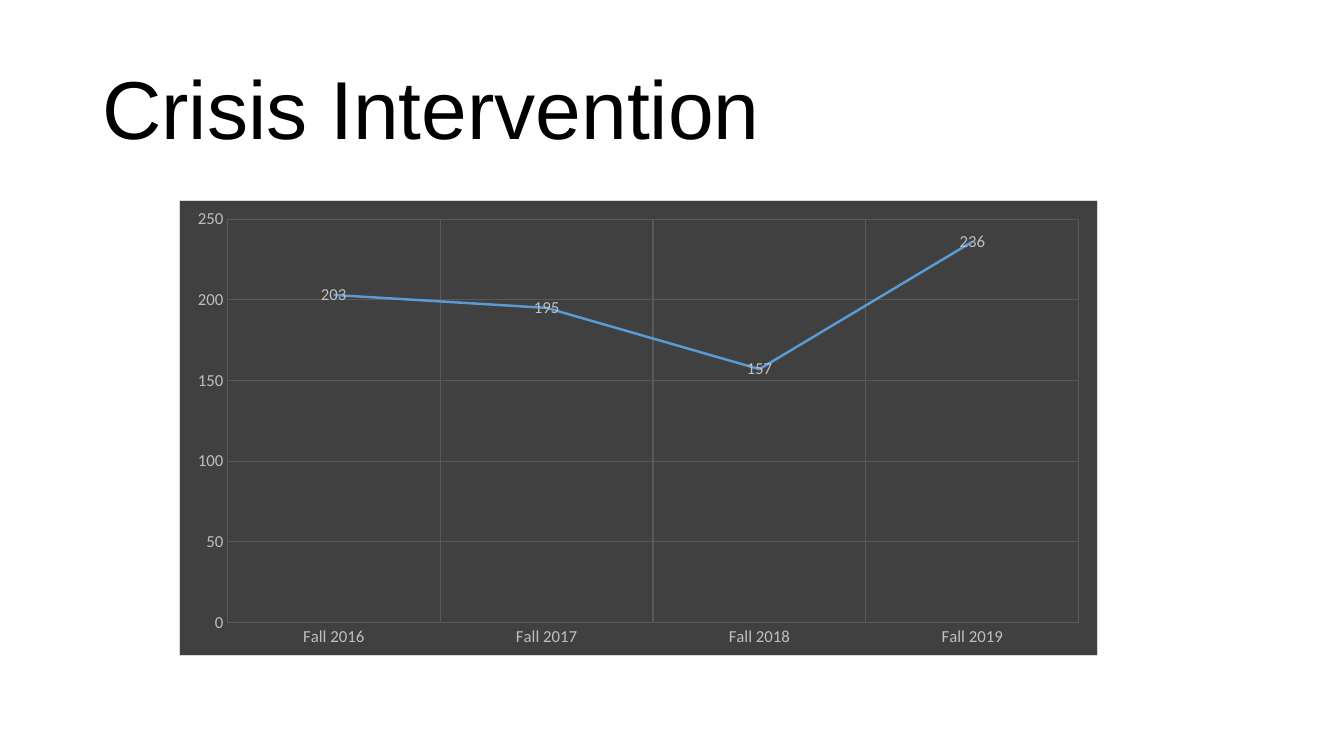
from dataclasses import dataclass

from lxml import etree
from pptx import Presentation
from pptx.chart.data import CategoryChartData
from pptx.dml.color import RGBColor as RGB
from pptx.enum.chart import XL_CHART_TYPE as CT
from pptx.enum.chart import XL_LABEL_POSITION as LabelPos
from pptx.enum.chart import XL_MARKER_STYLE as Marker
from pptx.enum.chart import XL_TICK_MARK as Tick
from pptx.enum.text import MSO_ANCHOR as Anchor
from pptx.oxml import parse_xml
from pptx.oxml.ns import nsdecls
from pptx.util import Cm, Pt


@dataclass(frozen=True)
class Theme:
    title_font: str = "Arial"
    chart_font: str = "Calibri"
    title_size: float = 58.7
    label_size: float = 12
    title: str = "000000"
    panel: str = "404040"
    border: str = "D9D9D9"
    grid: str = "595959"
    label: str = "BFBFBF"
    series: str = "5B9BD5"
    hairline: float = 0.75
    series_width: float = 1.75


THEME = Theme()
CASES = {"Fall 2016": 203, "Fall 2017": 195, "Fall 2018": 157, "Fall 2019": 236}


def style_font(font, name, size, color):
    font.name = name
    font.size = Pt(size)
    font.color.rgb = RGB.from_string(color)


def style_line(line, color, width):
    line.color.rgb = RGB.from_string(color)
    line.width = Pt(width)


def add_title(slide, box, text):
    tf = slide.shapes.add_textbox(*box).text_frame
    tf.word_wrap = True
    tf.vertical_anchor = Anchor.MIDDLE
    tf.text = text
    p = tf.paragraphs[0]
    p.line_spacing = 0.9
    style_font(p.runs[0].font, THEME.title_font, THEME.title_size, THEME.title)


def fill_panel(chart):
    """Dark chart background with a thin light border."""
    panel = parse_xml(
        f'<c:spPr {nsdecls("c", "a")}>'
        f'<a:solidFill><a:srgbClr val="{THEME.panel}"/></a:solidFill>'
        f'<a:ln w="{Pt(THEME.hairline)}"><a:solidFill>'
        f'<a:srgbClr val="{THEME.border}"/></a:solidFill></a:ln></c:spPr>')
    chart.element.chart.addnext(panel)


def add_case_chart(slide, box, cases):
    data = CategoryChartData()
    data.categories = list(cases)
    data.add_series("Series 1", list(cases.values()))
    chart = slide.shapes.add_chart(CT.LINE, *box, data).chart
    chart.has_title = False
    chart.has_legend = False
    label_style = (THEME.chart_font, THEME.label_size, THEME.label)
    style_font(chart.font, *label_style)
    fill_panel(chart)

    # Axes: gridlines only, no axis lines or ticks
    for axis in (chart.category_axis, chart.value_axis):
        axis.has_major_gridlines = True
        style_line(axis.major_gridlines.format.line, THEME.grid, THEME.hairline)
        axis.format.line.fill.background()
        axis.major_tick_mark = axis.minor_tick_mark = Tick.NONE
        style_font(axis.tick_labels.font, *label_style)
    chart.value_axis.minimum_scale = 0
    chart.value_axis.maximum_scale = 250
    chart.value_axis.major_unit = 50

    # Series and its values
    plot = chart.plots[0]
    plot.vary_by_categories = False
    series = plot.series[0]
    series.smooth = False
    series.marker.style = Marker.NONE
    style_line(series.format.line, THEME.series, THEME.series_width)
    labels = series.data_labels
    labels.show_value = True
    labels.position = LabelPos.CENTER
    style_font(labels.font, *label_style)


def main():
    prs = Presentation()
    prs.slide_width, prs.slide_height = Cm(33.87), Cm(19.05)
    slide = prs.slides.add_slide(prs.slide_layouts[6])
    add_title(slide, (Cm(2.33), Cm(1.01), Cm(29.21), Cm(3.68)),
              "Crisis Intervention")
    add_case_chart(slide, (Cm(4.51), Cm(5.03), Cm(23.15), Cm(11.5)), CASES)
    prs.save("out.pptx")


if __name__ == "__main__":
    main()
